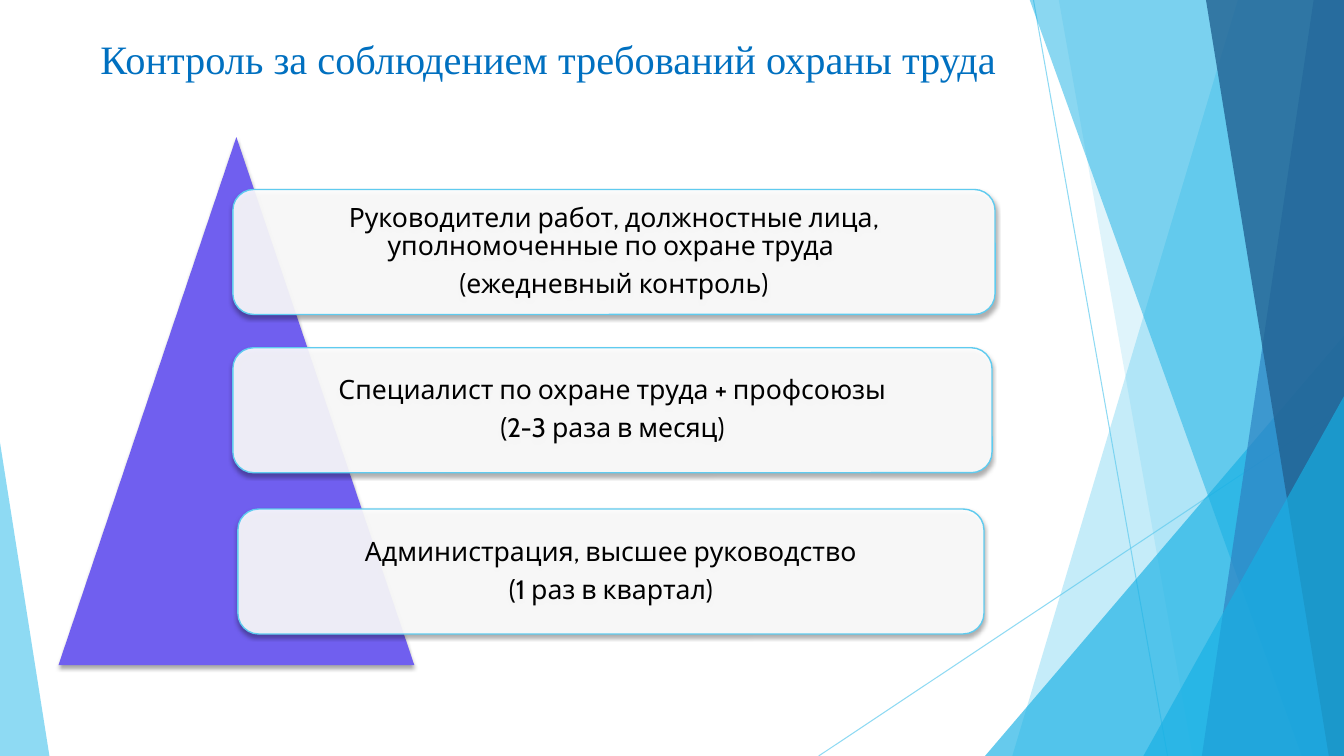
from lxml.etree import SubElement
from pptx import Presentation
from pptx.dml.color import RGBColor
from pptx.enum.shapes import MSO_CONNECTOR, MSO_SHAPE
from pptx.enum.text import MSO_ANCHOR, PP_ALIGN
from pptx.oxml.ns import qn
from pptx.util import Inches, Pt

WIDTH, HEIGHT = 13.33, 7.5
SKY, AZURE, BLUE, NAVY = "5FCBEF", "17B0E4", "2E83C3", "226292"


def set_color(color_format, color, opacity=100):
    """Set the solid colour of a fill or line, with opacity in percent."""
    color_format.rgb = RGBColor.from_string(color)
    if opacity < 100:
        solid = color_format._xFill
        SubElement(solid[0], qn("a:alpha"), val=str(opacity * 1000))


def style_shape(shape, color, opacity=100, line_color=None):
    shape.shadow.inherit = False
    shape.fill.solid()
    set_color(shape.fill.fore_color, color, opacity)
    if line_color:
        set_color(shape.line.color, line_color)
        shape.line.width = Pt(1)
    else:
        shape.line.fill.background()


def add_soft_shadow(shape):
    effects = shape._element.spPr.find(qn("a:effectLst"))
    shadow = SubElement(effects, qn("a:outerShdw"), blurRad=str(Pt(3)),
                        dist=str(Pt(2)), dir="5400000", rotWithShape="0")
    color = SubElement(shadow, qn("a:srgbClr"), val="000000")
    SubElement(color, qn("a:alpha"), val="35000")


def add_ray(slide, start, end):
    ray = slide.shapes.add_connector(
        MSO_CONNECTOR.STRAIGHT, *(Inches(value) for value in start + end))
    set_color(ray.line.color, SKY, 70)
    ray.line.width = Pt(0.75)
    SubElement(ray._element.spPr, qn("a:effectLst"))


def add_band(slide, top_left, bottom_left, color, opacity):
    """Fill from a slanted left edge to the right edge of the slide."""
    builder = slide.shapes.build_freeform(
        Inches(top_left), Inches(-0.01), scale=1.0)
    corners = [(WIDTH, -0.01), (WIDTH, HEIGHT), (bottom_left, HEIGHT)]
    builder.add_line_segments(
        [(Inches(x), Inches(y)) for x, y in corners], close=True)
    style_shape(builder.convert_to_shape(), color, opacity)


def add_triangle(slide, left, top, width, height, apex, color, opacity=100):
    triangle = slide.shapes.add_shape(
        MSO_SHAPE.ISOSCELES_TRIANGLE,
        Inches(left), Inches(top), Inches(width), Inches(height))
    triangle.adjustments[0] = apex
    style_shape(triangle, color, opacity)
    return triangle


def write_paragraph(paragraph, text, font_name, size, color):
    paragraph.text = text
    paragraph.alignment = PP_ALIGN.CENTER
    paragraph.font.name = font_name
    paragraph.font.size = Pt(size)
    set_color(paragraph.font.color, color)


def add_title(slide, text):
    box = slide.shapes.add_textbox(
        Inches(0.74), Inches(0.29), Inches(9.4), Inches(0.86))
    box.text_frame.word_wrap = True
    write_paragraph(box.text_frame.paragraphs[0], text,
                    "Times New Roman", 28.8, "0070C0")


def add_level(slide, left, top, width, lines):
    card = slide.shapes.add_shape(
        MSO_SHAPE.ROUNDED_RECTANGLE,
        Inches(left), Inches(top), Inches(width), Inches(1.24))
    style_shape(card, "FFFFFF", 90, SKY)
    add_soft_shadow(card)
    frame = card.text_frame
    frame.word_wrap = True
    frame.vertical_anchor = MSO_ANCHOR.MIDDLE
    frame.margin_left = frame.margin_right = Inches(0.08)
    frame.margin_top = frame.margin_bottom = Inches(0.08)
    for index, line in enumerate(lines):
        paragraph = frame.add_paragraph() if index else frame.paragraphs[0]
        write_paragraph(paragraph, line, "Cabin", 19, "000000")
        paragraph.line_spacing = 0.9
        paragraph.space_after = Pt(6.65)


def add_backdrop(slide):
    add_ray(slide, (10.25, 0), (11.58, HEIGHT))
    add_ray(slide, (WIDTH, 4.03), (8.12, HEIGHT))
    add_band(slide, 12.28, 10.04, SKY, 36)
    add_band(slide, 10.5, 11.83, SKY, 20)
    add_triangle(slide, 9.77, 3.33, 3.56, 4.17, 1, AZURE, 66)
    add_band(slide, 10.21, 12.91, AZURE, 50)
    add_band(slide, 13.03, 11.92, BLUE, 70)
    add_band(slide, 11.96, 13.18, NAVY, 80)
    add_triangle(slide, 11.34, 3.93, 1.99, 3.57, 1, AZURE, 66)
    add_triangle(slide, 0, 4.39, 0.49, 3.11, 0, SKY, 70)


def main():
    presentation = Presentation()
    presentation.slide_width = Inches(WIDTH)
    presentation.slide_height = Inches(HEIGHT)
    slide = presentation.slides.add_slide(presentation.slide_layouts[6])

    add_backdrop(slide)
    add_title(slide, "Контроль за соблюдением требований охраны труда")

    # Pyramid with the levels of control
    pyramid = add_triangle(slide, 0.58, 1.36, 3.53, 5.24, 0.5, "705FEF")
    add_soft_shadow(pyramid)
    add_level(slide, 2.31, 1.88, 7.56, [
        "Руководители работ, должностные лица, уполномоченные по охране труда ",
        "(ежедневный контроль)"])
    add_level(slide, 2.31, 3.45, 7.53, [
        "Специалист по охране труда + профсоюзы", "(2-3 раза в месяц)"])
    add_level(slide, 2.36, 5.05, 7.4, [
        "Администрация, высшее руководство", "(1 раз в квартал)"])

    presentation.save("out.pptx")


if __name__ == "__main__":
    main()
